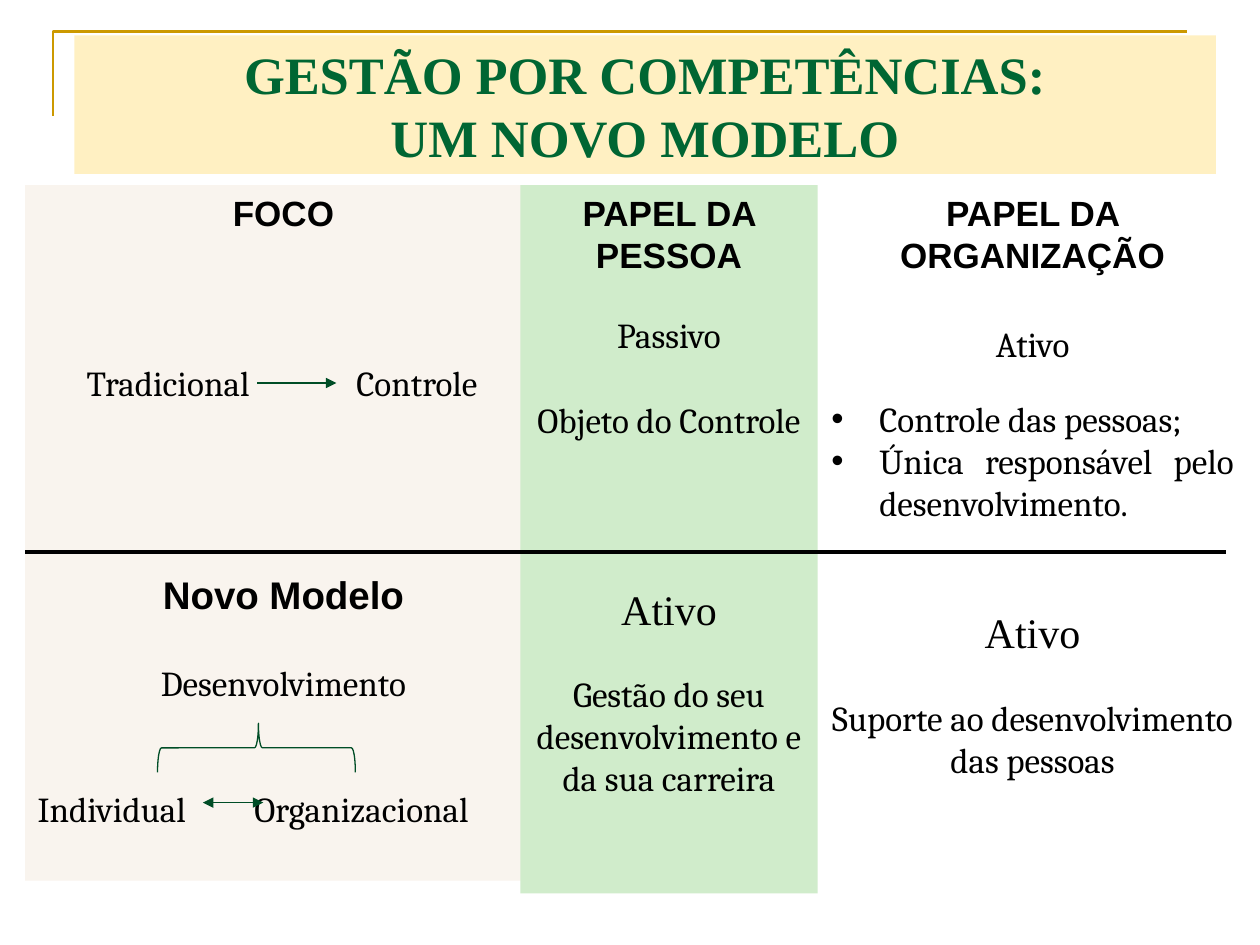
from dataclasses import dataclass

from lxml.etree import SubElement
from pptx import Presentation
from pptx.dml.color import RGBColor
from pptx.enum.shapes import MSO_CONNECTOR as Connector, MSO_SHAPE as Preset
from pptx.enum.text import MSO_ANCHOR as Anchor, MSO_AUTO_SIZE as AutoSize, PP_ALIGN as Align
from pptx.oxml.ns import qn
from pptx.util import Inches, Pt

GRID_COLUMNS, GRID_ROWS = 100, 75
BLACK, GREEN, GOLD = "000000", "004D26", "CC9900"


@dataclass(frozen=True)
class Box:
    column: float
    row: float
    columns: float
    rows: float


@dataclass(frozen=True)
class Line:
    text: str
    before: float = 0
    size: float = 20
    font: str = "Cambria"
    bold: bool = False
    align: Align = Align.CENTER
    tabs: tuple[float, ...] = ()
    bullet: bool = False


@dataclass(frozen=True)
class Panel:
    box: Box
    fill: str
    lines: tuple[Line, ...]


@dataclass(frozen=True)
class Rule:
    start: float
    end: float
    row: float
    color: str
    weight: float
    ends: tuple[str, ...] = ()


def heading(text: str, before: float = 0, size: float = 20) -> Line:
    return Line(text, before, size, "Arial", True)


def role(text: str, before: float) -> Line:
    return Line(text, before, 24, "Times New Roman")


PANELS = (
    Panel(Box(2, 14.7, 41, 55.2), "F9F4EE", (
        heading("FOCO"),
        Line("\tTradicional\tControle", 73, align=Align.LEFT, tabs=(3.9, 25.3)),
        heading("Novo Modelo", 96, 22),
        Line("Desenvolvimento", 25),
        Line("Individual\tOrganizacional", 48, align=Align.LEFT, tabs=(17.2,)),
    )),
    Panel(Box(41.3, 14.7, 23.6, 56.2), "D0ECCB", (
        heading("PAPEL DA PESSOA"),
        Line("Passivo", 22),
        Line("Objeto do Controle", 24),
        role("Ativo", 82),
        Line("Gestão do seu desenvolvimento e da sua carreira", 22),
    )),
    Panel(Box(65, 14.7, 33.9, 54.4), "FFFFFF", (
        heading("PAPEL DA ORGANIZAÇÃO"),
        Line("Ativo", 27),
        Line("Controle das pessoas;", 19, align=Align.JUSTIFY, bullet=True),
        Line("Única responsável pelo desenvolvimento.", align=Align.JUSTIFY, bullet=True),
        role("Ativo", 47),
        Line("Suporte ao desenvolvimento das pessoas", 23),
    )),
)

RULES = (
    Rule(20.4, 26.7, 30.4, GREEN, 1, ("tailEnd",)),
    Rule(16.1, 20.9, 63.7, GREEN, 0.75, ("headEnd", "tailEnd")),
    Rule(2, 97.3, 43.8, BLACK, 2),
)

presentation = Presentation()
presentation.slide_width, presentation.slide_height = Inches(10), Inches(7.5)
slide = presentation.slides.add_slide(presentation.slide_layouts[5])


def across(columns: float) -> int:
    return round(presentation.slide_width * columns / GRID_COLUMNS)


def down(rows: float) -> int:
    return round(presentation.slide_height * rows / GRID_ROWS)


def place(box: Box) -> tuple[int, int, int, int]:
    return across(box.column), down(box.row), across(box.columns), down(box.rows)


def paint(target, color: str) -> None:
    target.fill.solid()
    target.fill.fore_color.rgb = RGBColor.from_string(color)


def stroke(shape, color: str, weight: float) -> None:
    paint(shape.line, color)
    shape.line.width = Pt(weight)


def write(paragraph, text: str, size: float, font: str, color: str, bold: bool) -> None:
    run = paragraph.add_run()
    run.text = text
    run.font.size, run.font.name, run.font.bold = Pt(size), font, bold
    paint(run.font, color)


def draw_title(box: Box, lines: tuple[str, ...]) -> None:
    title = slide.shapes.title
    title.left, title.top, title.width, title.height = place(box)
    paint(title, "FFF0C2")
    frame = title.text_frame
    frame.auto_size, frame.vertical_anchor = AutoSize.NONE, Anchor.BOTTOM
    paragraph = frame.paragraphs[0]
    paragraph.alignment = Align.CENTER
    for index, text in enumerate(lines):
        if index:
            paragraph.add_line_break()
        write(paragraph, text, 30, "Times New Roman", "006633", True)


def draw_corner(left: float, top: float, right: float, bottom: float) -> None:
    builder = slide.shapes.build_freeform(across(left), down(bottom))
    builder.add_line_segments([(across(left), down(top)), (across(right), down(top))], close=False)
    corner = builder.convert_to_shape()
    corner.shadow.inherit = False
    corner.fill.background()
    stroke(corner, GOLD, 1.5)


def add_line(paragraph, line: Line) -> None:
    paragraph.alignment, paragraph.space_before = line.align, Pt(line.before)
    properties = paragraph._p.get_or_add_pPr()
    if line.bullet:
        properties.set("marL", str(across(3.8)))
        properties.set("indent", str(-across(3.8)))
        SubElement(properties, qn("a:buFont"), typeface="Arial")
        SubElement(properties, qn("a:buChar"), char="•")
    if line.tabs:
        stops = SubElement(properties, qn("a:tabLst"))
        for stop in line.tabs:
            SubElement(stops, qn("a:tab"), pos=str(across(stop)), algn="l")
    write(paragraph, line.text, line.size, line.font, BLACK, line.bold)


def draw_panel(panel: Panel) -> None:
    shape = slide.shapes.add_shape(Preset.RECTANGLE, *place(panel.box))
    shape.shadow.inherit = False
    shape.line.fill.background()
    paint(shape, panel.fill)
    frame = shape.text_frame
    frame.word_wrap, frame.vertical_anchor = True, Anchor.TOP
    for index, line in enumerate(panel.lines):
        add_line(frame.add_paragraph() if index else frame.paragraphs[0], line)


def draw_rule(rule: Rule) -> None:
    connector = slide.shapes.add_connector(
        Connector.STRAIGHT, across(rule.start), down(rule.row), across(rule.end), down(rule.row))
    stroke(connector, rule.color, rule.weight)
    for end in rule.ends:
        SubElement(connector.line._get_or_add_ln(), qn(f"a:{end}"), type="triangle")
    SubElement(connector._element.spPr, qn("a:effectLst"))


def draw_brace(box: Box) -> None:
    brace = slide.shapes.add_shape(Preset.LEFT_BRACE, *place(box))
    brace.shadow.inherit = False
    brace.rotation = 90
    brace.adjustments[0], brace.adjustments[1] = 0.08, 0.49
    brace.fill.background()
    stroke(brace, GREEN, 0.75)


draw_title(Box(5.9, 2.8, 90.6, 11), ("GESTÃO POR COMPETÊNCIAS:", "UM NOVO MODELO"))
draw_corner(4.2, 2.5, 94.2, 9.2)
for panel in PANELS:
    draw_panel(panel)
for rule in RULES:
    draw_rule(rule)
draw_brace(Box(18.4, 51.5, 3.9, 15.7))
presentation.save("out.pptx")
